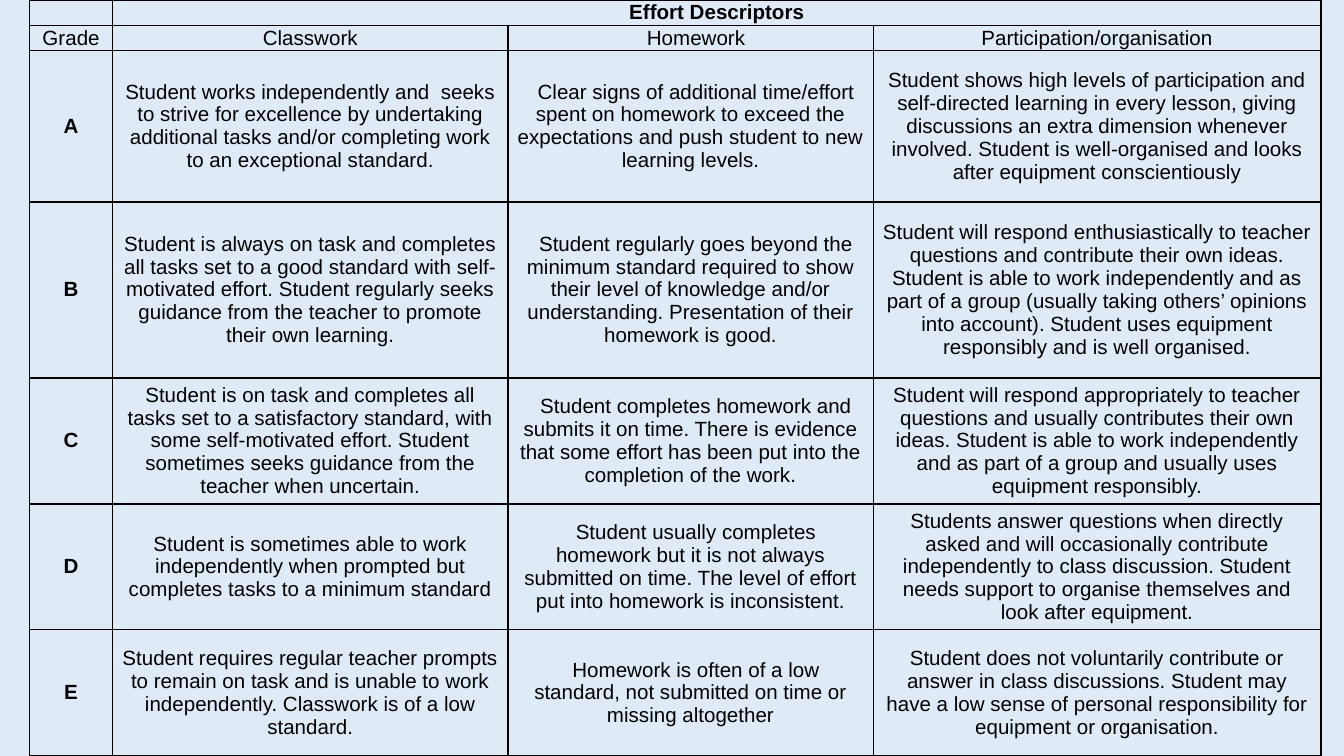
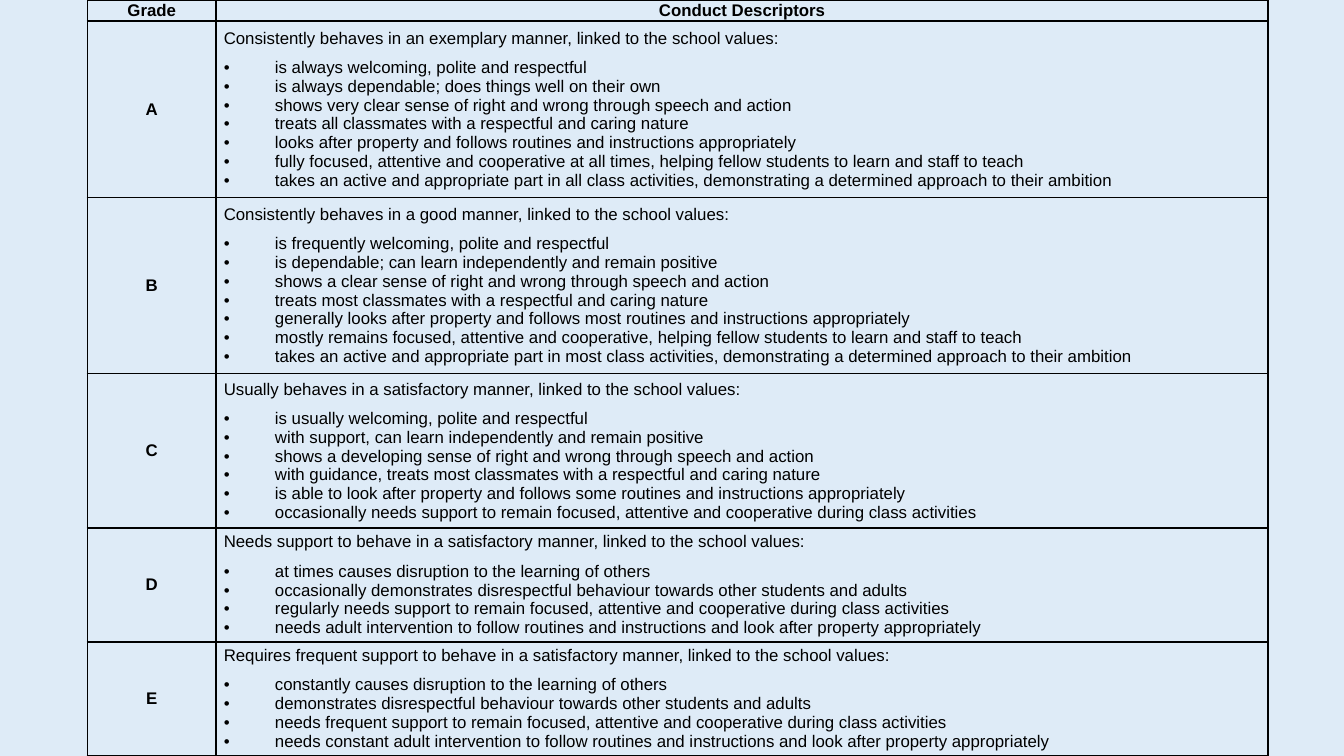
from dataclasses import dataclass

import pptx
import pptx.dml.color
import pptx.enum.text
import pptx.oxml.ns
import pptx.util
from lxml import etree

Pt = pptx.util.Pt
qn = pptx.oxml.ns.qn
ALIGN = pptx.enum.text.PP_ALIGN
MIDDLE = pptx.enum.text.MSO_ANCHOR.MIDDLE


@dataclass(frozen=True)
class Theme:
    background: str = "DEEBF7"
    ink: str = "000000"
    font: str = "Arial"
    effort_size: float = 11
    conduct_size: float = 9
    border: float = 1
    bullet_indent: float = 27.4
    lead_gap: float = 5.6


def rgb(colour):
    return pptx.dml.color.RGBColor.from_string(colour)


def assign(target, values):
    for name, value in values.items():
        setattr(target, name, value)


class DescriptorDeck:
    """Holds the theme and the slide being filled."""

    def __init__(self, theme):
        self.theme = theme
        self.deck = pptx.Presentation()
        assign(self.deck, {"slide_width": Pt(720), "slide_height": Pt(405)})
        self.slide = None

    def new_slide(self):
        self.slide = self.deck.slides.add_slide(self.deck.slide_layouts[6])
        fill = self.slide.background.fill
        fill.solid()
        fill.fore_color.rgb = rgb(self.theme.background)

    def grid(self, left, widths, heights, inset, size):
        """Add an unfilled table with black rules and return it."""
        frame = self.slide.shapes.add_table(
            len(heights), len(widths), Pt(left), Pt(0), Pt(sum(widths)), Pt(sum(heights)))
        table = frame.table
        assign(table, {"first_row": False, "horz_banding": False})
        for column, width in zip(table.columns, widths):
            column.width = Pt(width)
        for row, height in zip(table.rows, heights):
            row.height = Pt(height)
        for cell in table.iter_cells():
            assign(cell, {"margin_left": Pt(inset), "margin_right": Pt(inset),
                          "margin_top": 0, "margin_bottom": 0,
                          "vertical_anchor": MIDDLE})
            cell.fill.background()
            self.rule_cell(cell)
            # Keep empty cells as low as the text rows
            closing = etree.SubElement(cell.text_frame.paragraphs[0]._p, qn("a:endParaRPr"))
            closing.set("sz", str(size * 100))
        return table

    def rule_cell(self, cell):
        properties = cell._tc.get_or_add_tcPr()
        for position, side in enumerate(("lnL", "lnR", "lnT", "lnB")):
            line = etree.Element(qn(f"a:{side}"), w=str(Pt(self.theme.border)))
            paint = etree.SubElement(line, qn("a:solidFill"))
            etree.SubElement(paint, qn("a:srgbClr"), val=self.theme.ink)
            properties.insert(position, line)

    def set_text(self, paragraph, wording, size, bold=False, align=ALIGN.CENTER, indent=0):
        paragraph.alignment = align
        paragraph._p.get_or_add_pPr().set("indent", str(Pt(indent)))
        run = paragraph.add_run()
        run.text = wording
        assign(run.font, {"name": self.theme.font, "size": Pt(size), "bold": bold})
        run.font.color.rgb = rgb(self.theme.ink)

    def label(self, cell, wording, size, **style):
        self.set_text(cell.text_frame.paragraphs[0], wording, size, **style)

    def bullet_list(self, cell, lead, points, size):
        """Set a lead sentence and the bullet points below it."""
        self.label(cell, lead, size, align=ALIGN.LEFT)
        cell.text_frame.paragraphs[0].space_after = Pt(self.theme.lead_gap)
        hang = self.theme.bullet_indent
        for point in points:
            paragraph = cell.text_frame.add_paragraph()
            self.set_text(paragraph, point, size, align=ALIGN.LEFT, indent=-hang)
            properties = paragraph._p.get_or_add_pPr()
            properties.set("marL", str(Pt(hang)))
            etree.SubElement(properties, qn("a:buFont"), typeface=self.theme.font)
            etree.SubElement(properties, qn("a:buChar"), char="•")


# Effort: heading, indent of the heading, indent of the text below it
EFFORT_COLUMNS = [("Grade", -4.3, 0), ("Classwork", -5.8, 0),
                  ("Homework", 5.8, 5.8), ("Participation/organisation", -5.8, 0)]

EFFORT = [
    ("A",
     "Student works independently and  seeks to strive for excellence by undertaking "
     "additional tasks and/or completing work to an exceptional standard.",
     "Clear signs of additional time/effort spent on homework to exceed the expectations "
     "and push student to new learning levels.",
     "Student shows high levels of participation and self-directed learning in every lesson, "
     "giving discussions an extra dimension whenever involved. Student is well-organised and "
     "looks after equipment conscientiously"),
    ("B",
     "Student is always on task and completes all tasks set to a good standard with "
     "self-motivated effort. Student regularly seeks guidance from the teacher to promote "
     "their own learning.",
     "Student regularly goes beyond the minimum standard required to show their level of "
     "knowledge and/or understanding. Presentation of their homework is good.",
     "Student will respond enthusiastically to teacher questions and contribute their own "
     "ideas. Student is able to work independently and as part of a group (usually taking "
     "others’ opinions into account). Student uses equipment responsibly and is well organised."),
    ("C",
     "Student is on task and completes all tasks set to a satisfactory standard, with some "
     "self-motivated effort. Student sometimes seeks guidance from the teacher when uncertain.",
     "Student completes homework and submits it on time. There is evidence that some effort "
     "has been put into the completion of the work.",
     "Student will respond appropriately to teacher questions and usually contributes their "
     "own ideas. Student is able to work independently and as part of a group and usually "
     "uses equipment responsibly."),
    ("D",
     "Student is sometimes able to work independently when prompted but completes tasks to a "
     "minimum standard",
     "Student usually completes homework but it is not always submitted on time. The level of "
     "effort put into homework is inconsistent.",
     "Students answer questions when directly asked and will occasionally contribute "
     "independently to class discussion. Student needs support to organise themselves and "
     "look after equipment."),
    ("E",
     "Student requires regular teacher prompts to remain on task and is unable to work "
     "independently. Classwork is of a low standard.",
     "Homework is often of a low standard, not submitted on time or missing altogether",
     "Student does not voluntarily contribute or answer in class discussions. Student may "
     "have a low sense of personal responsibility for equipment or organisation."),
]

# Conduct: grade, lead (completed by LEAD_END), points
LEAD_END = " manner, linked to the school values:"
CONDUCT = [
    ("A", "Consistently behaves in an exemplary", [
        "is always welcoming, polite and respectful",
        "is always dependable; does things well on their own",
        "shows very clear sense of right and wrong through speech and action",
        "treats all classmates with a respectful and caring nature",
        "looks after property and follows routines and instructions appropriately",
        "fully focused, attentive and cooperative at all times, helping fellow students to "
        "learn and staff to teach",
        "takes an active and appropriate part in all class activities, demonstrating a "
        "determined approach to their ambition"]),
    ("B", "Consistently behaves in a good", [
        "is frequently welcoming, polite and respectful",
        "is dependable; can learn independently and remain positive",
        "shows a clear sense of right and wrong through speech and action",
        "treats most classmates with a respectful and caring nature",
        "generally looks after property and follows most routines and instructions appropriately",
        "mostly remains focused, attentive and cooperative, helping fellow students to learn "
        "and staff to teach",
        "takes an active and appropriate part in most class activities, demonstrating a "
        "determined approach to their ambition"]),
    ("C", "Usually behaves in a satisfactory", [
        "is usually welcoming, polite and respectful",
        "with support, can learn independently and remain positive",
        "shows a developing sense of right and wrong through speech and action",
        "with guidance, treats most classmates with a respectful and caring nature",
        "is able to look after property and follows some routines and instructions appropriately",
        "occasionally needs support to remain focused, attentive and cooperative during class "
        "activities"]),
    ("D", "Needs support to behave in a satisfactory", [
        "at times causes disruption to the learning of others",
        "occasionally demonstrates disrespectful behaviour towards other students and adults",
        "regularly needs support to remain focused, attentive and cooperative during class "
        "activities",
        "needs adult intervention to follow routines and instructions and look after property "
        "appropriately"]),
    ("E", "Requires frequent support to behave in a satisfactory", [
        "constantly causes disruption to the learning of others",
        "demonstrates disrespectful behaviour towards other students and adults",
        "needs frequent support to remain focused, attentive and cooperative during class "
        "activities",
        "needs constant adult intervention to follow routines and instructions and look after "
        "property appropriately"]),
]


def effort_slide(deck):
    size = deck.theme.effort_size
    deck.new_slide()
    table = deck.grid(15.8, [44.6, 211.7, 195.8, 239.8],
                      [13.5, 13.5, 81, 94.3] + [67.5] * 3, 4.9, size)

    # Headings
    table.cell(0, 1).merge(table.cell(0, 3))
    deck.label(table.cell(0, 1), "Effort Descriptors", size, bold=True, indent=-5.8)
    for column, (heading, indent, _) in enumerate(EFFORT_COLUMNS):
        deck.label(table.cell(1, column), heading, size, indent=indent)

    # Grades
    for row, descriptors in enumerate(EFFORT, start=2):
        for column, wording in enumerate(descriptors):
            deck.label(table.cell(row, column), wording, size, bold=column == 0,
                       indent=EFFORT_COLUMNS[column][2])


def conduct_slide(deck):
    size = deck.theme.conduct_size
    deck.new_slide()
    table = deck.grid(46.8, [69, 563.4], [11.4, 94.4, 94.4, 82.8, 60.9, 60.9], 4.1, size)

    # Headings
    deck.label(table.cell(0, 0), "Grade", size, bold=True, indent=-4.3)
    deck.label(table.cell(0, 1), "Conduct Descriptors", size, bold=True)

    # Grades
    for row, (grade, lead, points) in enumerate(CONDUCT, start=1):
        deck.label(table.cell(row, 0), grade, size, bold=True)
        deck.bullet_list(table.cell(row, 1), lead + LEAD_END, points, size)


def main():
    descriptors = DescriptorDeck(Theme())
    effort_slide(descriptors)
    conduct_slide(descriptors)
    descriptors.deck.save("out.pptx")


if __name__ == "__main__":
    main()
